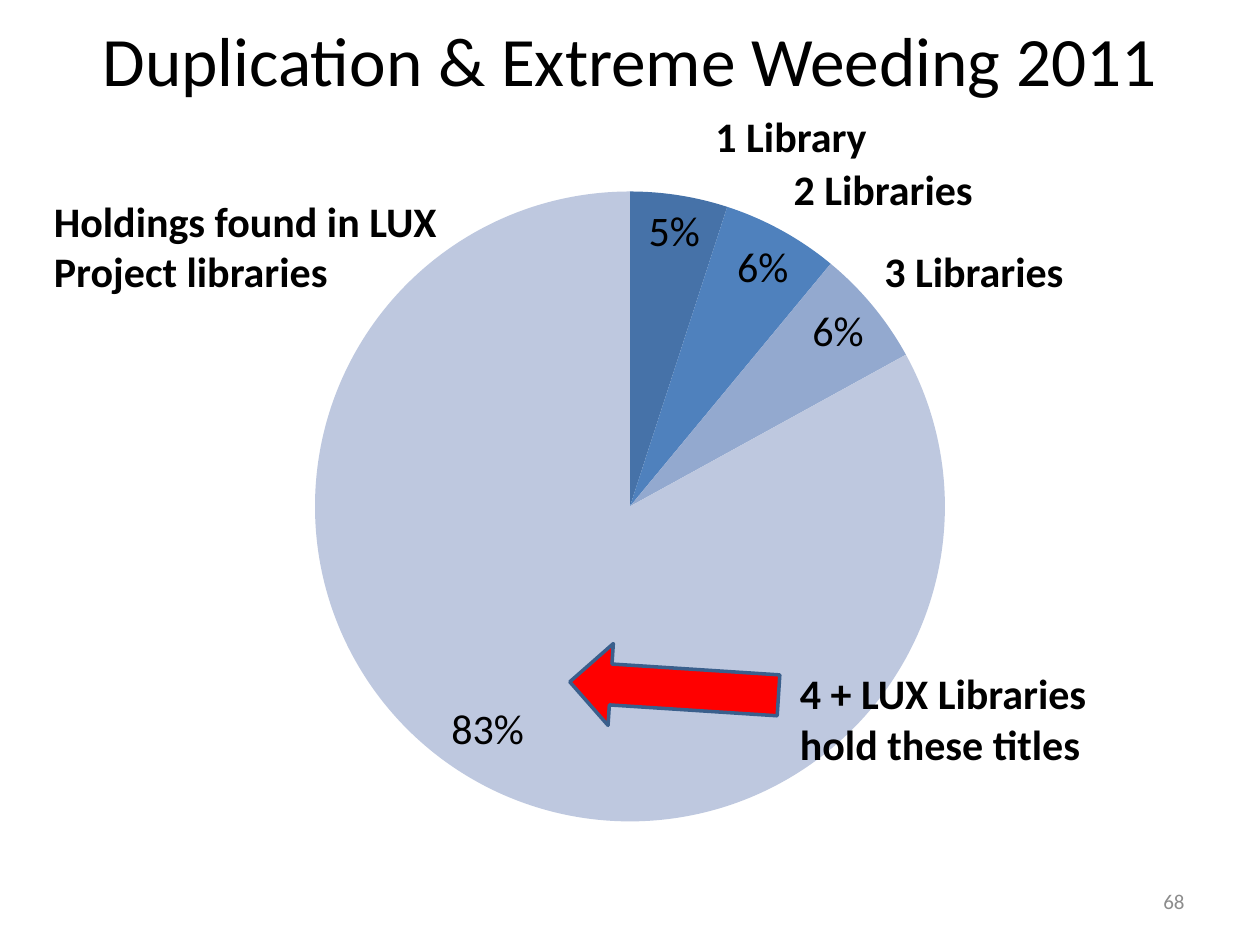
"""Build the slide on duplicated holdings and extreme weeding."""
from dataclasses import dataclass

from lxml import etree
from pptx import Presentation
from pptx.chart.data import CategoryChartData
from pptx.dml.color import RGBColor
from pptx.enum import chart as charts, shapes, text
from pptx.oxml import ns
from pptx.util import Inches, Pt


@dataclass(frozen=True)
class Theme:
    """Colours, font and type sizes of the slide."""
    font: str = "Calibri"
    ink: str = "000000"
    muted: str = "8C8C8C"
    arrow: str = "FF0000"
    outline: str = "3A5F8C"
    slices: tuple[str, ...] = ("385D8A", "4672A8", "4F81BD", "93A9CF", "BEC8DF")
    title: float = 39.6
    label: float = 24
    number: float = 12


@dataclass(frozen=True)
class Area:
    """A rectangle in inches."""
    left: float
    top: float
    width: float
    height: float

    def lengths(self) -> tuple:
        """Return the position and size as lengths."""
        return (Inches(self.left), Inches(self.top),
                Inches(self.width), Inches(self.height))


@dataclass(frozen=True)
class Label:
    """A bold caption with its place."""
    words: str
    area: Area


THEME = Theme()
LABELS = (
    Label("Holdings found in LUX Project libraries", Area(0.33, 1.5, 3.5, 0.91)),
    Label("4 + LUX Libraries hold these titles", Area(6.25, 5.25, 3.08, 0.91)),
    Label("1 Library", Area(5.58, 0.83, 1.75, 0.5)),
    Label("2 Libraries", Area(6.2, 1.25, 1.75, 0.5)),
    Label("3 Libraries", Area(6.92, 1.9, 1.75, 0.5)),
)
HOLDINGS = {"1": 0, "2": 5, "3": 6, "4": 6, "5": 83}
CHART = Area(0.5, 0.92, 9.17, 5.75)
PIE = Area(2.5, 1.52, 5, 5)


def write(box, words: str, *, size: float, color: str = THEME.ink, bold: bool = False,
          align=text.PP_ALIGN.LEFT, anchor=text.MSO_ANCHOR.TOP,
          fit=text.MSO_AUTO_SIZE.NONE) -> None:
    """Fill a box with one formatted paragraph."""
    frame = box.text_frame
    frame.word_wrap = True
    frame.auto_size = fit
    frame.vertical_anchor = anchor
    para = frame.paragraphs[0]
    para.alignment = align
    span = para.add_run()
    span.text = words
    style(span.font, size, color)
    span.font.bold = bold


def style(font, size: float, color: str = THEME.ink) -> None:
    """Give a font the slide's typeface, a size and a colour."""
    font.name, font.size = THEME.font, Pt(size)
    font.color.rgb = RGBColor.from_string(color)


def paint(fill, color: str) -> None:
    """Make a fill solid."""
    fill.solid()
    fill.fore_color.rgb = RGBColor.from_string(color)


def add_label(page, label: Label) -> None:
    """Add one bold caption."""
    box = page.shapes.add_textbox(*label.area.lengths())
    write(box, label.words, size=THEME.label, bold=True,
          fit=text.MSO_AUTO_SIZE.SHAPE_TO_FIT_TEXT)


def set_plot_area(chart, outer: Area, inner: Area) -> None:
    """Fix the inner plot area within the chart."""
    area = chart.plots[0]._element.getparent()
    for old in area.findall(ns.qn("c:layout")):
        area.remove(old)
    layout = etree.Element(ns.qn("c:layout"))
    area.insert(0, layout)
    manual = etree.SubElement(layout, ns.qn("c:manualLayout"))
    settings = {
        "layoutTarget": "inner", "xMode": "edge", "yMode": "edge",
        "x": (inner.left - outer.left) / outer.width,
        "y": (inner.top - outer.top) / outer.height,
        "w": inner.width / outer.width,
        "h": inner.height / outer.height,
    }
    for name, value in settings.items():
        etree.SubElement(manual, ns.qn(f"c:{name}")).set("val", str(value))


def add_pie(page) -> None:
    """Add the pie of holdings with percent labels."""
    data = CategoryChartData()
    data.categories = list(HOLDINGS)
    data.add_series("Series 1", list(HOLDINGS.values()))
    chart = page.shapes.add_chart(
        charts.XL_CHART_TYPE.PIE, *CHART.lengths(), data).chart
    chart.has_legend = chart.has_title = False
    style(chart.font, THEME.label)
    set_plot_area(chart, CHART, PIE)

    plot = chart.plots[0]
    plot.vary_by_categories = True
    series = plot.series[0]
    for index, color in enumerate(THEME.slices):
        paint(series.points[index].format.fill, color)
    labels = series.data_labels
    labels.show_percentage, labels.show_value = True, False
    labels.number_format, labels.number_format_is_linked = "0%", False
    labels.position = charts.XL_LABEL_POSITION.BEST_FIT
    style(labels.font, THEME.label)


def add_arrow(page) -> None:
    """Add the red arrow that points at the largest slice."""
    arrow = page.shapes.add_shape(
        shapes.MSO_SHAPE.RIGHT_ARROW, *Area(4.52, 5.14, 1.66, 0.65).lengths())
    arrow.rotation = 183.7
    arrow.shadow.inherit = False
    paint(arrow.fill, THEME.arrow)
    arrow.line.color.rgb = RGBColor.from_string(THEME.outline)
    arrow.line.width = Pt(2)


def main() -> None:
    """Build and save the deck."""
    deck = Presentation()
    deck.slide_width, deck.slide_height = Inches(10), Inches(7.5)
    page = deck.slides.add_slide(deck.slide_layouts.get_by_name("Title Only"))
    title = page.shapes.title
    title.left, title.top, title.width, title.height = Area(0.5, 0.08, 9, 0.78).lengths()
    write(title, "Duplication & Extreme Weeding 2011", size=THEME.title,
          align=text.PP_ALIGN.CENTER, anchor=text.MSO_ANCHOR.MIDDLE)
    number = page.shapes.add_textbox(*Area(7.17, 6.95, 2.33, 0.4).lengths())
    write(number, "68", size=THEME.number, color=THEME.muted,
          align=text.PP_ALIGN.RIGHT, anchor=text.MSO_ANCHOR.MIDDLE)
    add_pie(page)
    add_arrow(page)
    for label in LABELS:
        add_label(page, label)
    deck.save("out.pptx")


if __name__ == "__main__":
    main()
